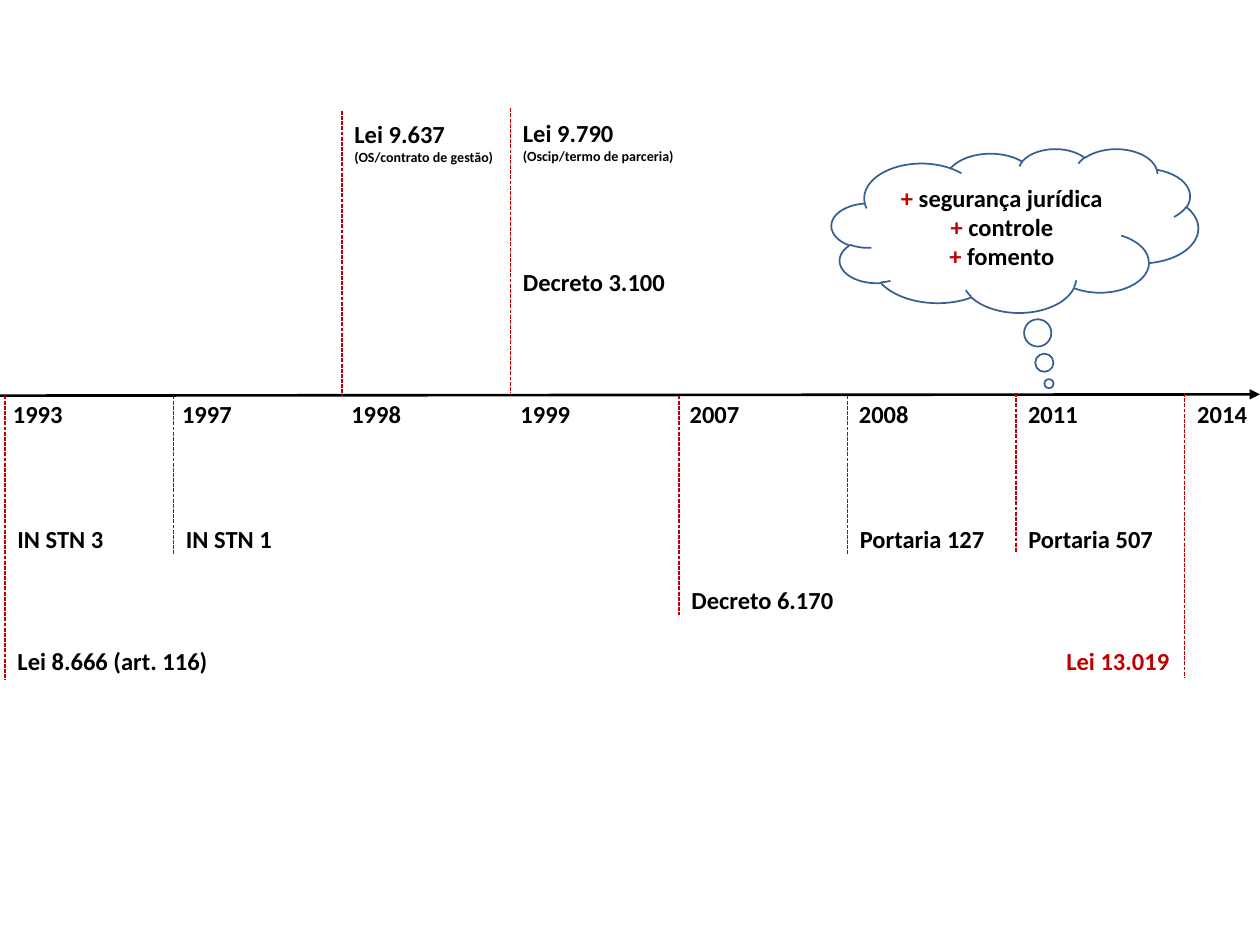
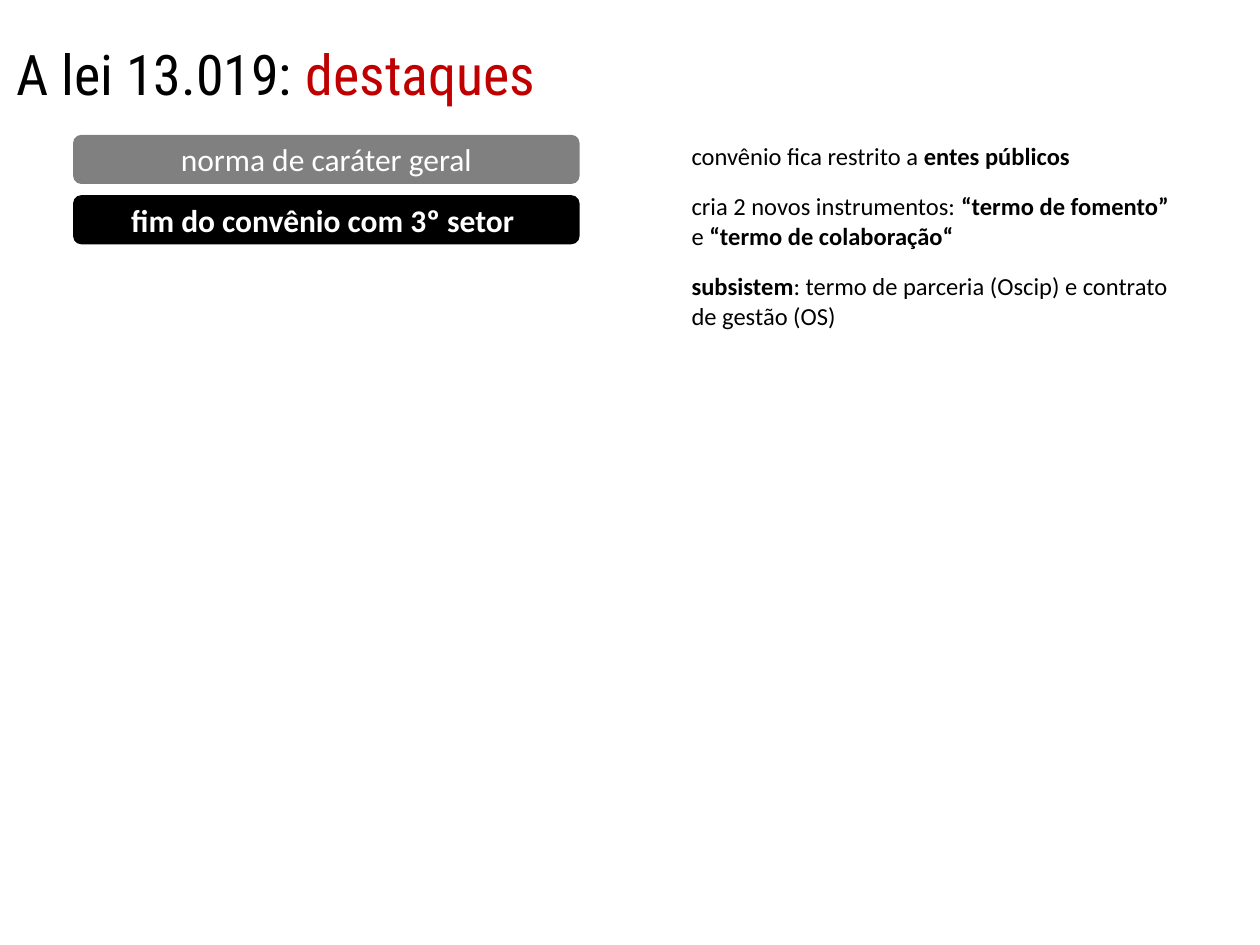
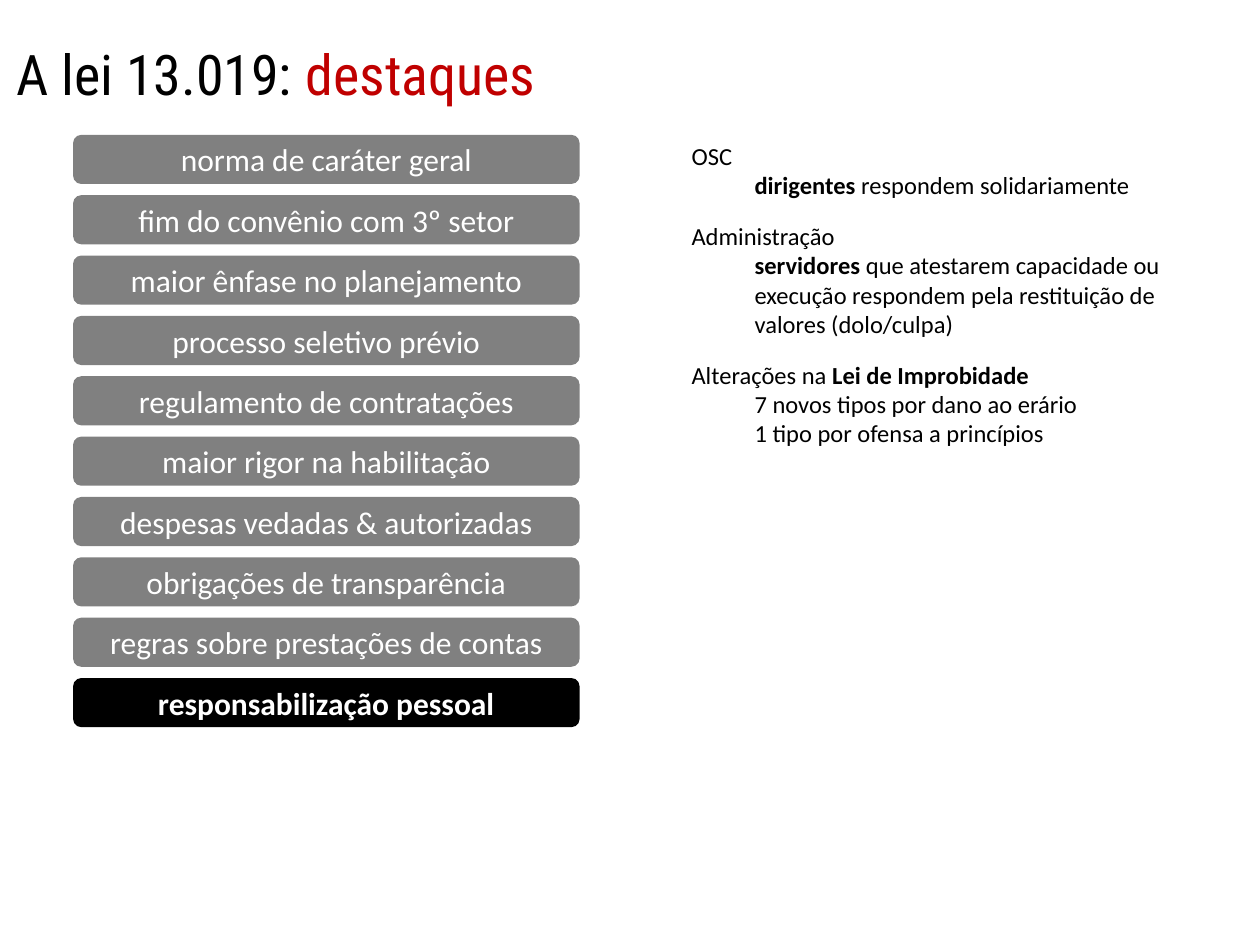
import copy
from dataclasses import dataclass

import pptx
import pptx.dml.color
import pptx.enum.dml
import pptx.enum.shapes
import pptx.enum.text
import pptx.oxml.ns
import pptx.util
from lxml import etree

Inches, Pt = pptx.util.Inches, pptx.util.Pt
RGBColor = pptx.dml.color.RGBColor
Align = pptx.enum.text.PP_ALIGN
Anchor = pptx.enum.text.MSO_ANCHOR
AutoSize = pptx.enum.text.MSO_AUTO_SIZE
Shape = pptx.enum.shapes.MSO_SHAPE

# Shared look
BLACK = RGBColor(0x00, 0x00, 0x00)
WHITE = RGBColor(0xFF, 0xFF, 0xFF)
RED = RGBColor(0xC0, 0x00, 0x00)
GRAY = RGBColor(0x80, 0x80, 0x80)
BLUE = RGBColor(0x37, 0x60, 0x92)
BODY_FONT, TITLE_FONT = "Calibri", "Roboto Condensed"

# Grids, in inches
SLIDE_WIDTH, SLIDE_HEIGHT = 10, 7.5
AXIS_TOP = 3.14
YEAR_WIDTH, LINE_HEIGHT = 0.6, 0.34
FIRST_MARK, LAST_MARK = 0.04, 9.4
BAR_LEFT, BAR_TOP, BAR_WIDTH, BAR_HEIGHT = 0.58, 1.07, 4.02, 0.39
BAR_PITCH = 0.479
PANEL_LEFT, PANEL_HEIGHT = 5.39, 4.71


@dataclass(frozen=True)
class Span:
    text: str
    bold: bool = False
    color: RGBColor = BLACK
    size: float = 14
    font: str = BODY_FONT
    break_after: bool = False


@dataclass(frozen=True)
class Para:
    spans: tuple[Span, ...]
    align: Align = Align.LEFT
    after: float = 0
    indented: bool = False
    spacing: float | None = None


@dataclass(frozen=True)
class Year:
    name: str
    mark_top: float
    mark_bottom: float


@dataclass(frozen=True)
class Label:
    column: int
    top: float
    width: float
    spans: tuple[Span, ...]
    height: float = LINE_HEIGHT
    anchor: Anchor = Anchor.TOP
    before_mark: bool = False


@dataclass(frozen=True)
class Topic:
    bars: tuple[str, ...]
    panel: tuple[Para, ...]


def strong(text: str, color: RGBColor = BLACK) -> Span:
    return Span(text, True, color)


def law(name: str, note: str) -> tuple[Span, ...]:
    return Span(name, True, break_after=True), Span(note, True, size=8)


YEARS = (
    Year("1993", 3.14, 5.4), Year("1997", 3.14, 4.4),
    Year("1998", 0.88, 3.14), Year("1999", 0.86, 3.12),
    Year("2007", 3.14, 4.88), Year("2008", 3.14, 4.4),
    Year("2011", 3.12, 4.38), Year("2014", 3.12, 5.38),
)
LABELS = (
    Label(0, 5.07, 1.73, (strong("Lei 8.666 (art. 116)"),), anchor=Anchor.BOTTOM),
    Label(0, 4.11, 0.89, (strong("IN STN 3"),)),
    Label(1, 4.11, 0.89, (strong("IN STN 1"),)),
    Label(2, 0.89, 1.32, law("Lei 9.637", "(OS/contrato de gestão)"), 0.47, Anchor.BOTTOM),
    Label(3, 0.88, 1.41, law("Lei 9.790", "(Oscip/termo de parceria)"), 0.47, Anchor.BOTTOM),
    Label(3, 2.07, 1.33, (strong("Decreto 3.100"),)),
    Label(4, 4.59, 1.33, (strong("Decreto 6.170"),)),
    Label(5, 4.11, 1.2, (strong("Portaria 127"),)),
    Label(6, 4.11, 1.2, (strong("Portaria 507"),)),
    Label(7, 5.07, 1.02, (strong("Lei 13.019", RED),), anchor=Anchor.BOTTOM, before_mark=True),
)
GAINS = ("segurança jurídica", "controle", "fomento")
TITLE = Para((Span("A lei 13.019: ", size=32, font=TITLE_FONT),
              Span("destaques", color=RED, size=32, font=TITLE_FONT)), spacing=1.5)

# The last bar of each topic is the one in focus
TOPICS = (
    Topic(
        ("norma de caráter geral", "fim do convênio com 3º setor "),
        (
            Para((Span("convênio fica restrito a "), strong("entes públicos")), after=12),
            Para((Span("cria 2 novos instrumentos: "), strong("“termo de fomento” "),
                  Span("e "), strong("“termo de colaboração“")), after=12),
            Para((strong("subsistem"),
                  Span(": termo de parceria (Oscip) e contrato de gestão (OS)")), after=12),
        ),
    ),
    Topic(
        ("norma de caráter geral", "fim do convênio com 3º setor",
         "maior ênfase no planejamento", "processo seletivo prévio",
         "regulamento de contratações", "maior rigor na habilitação",
         "despesas vedadas & autorizadas", "obrigações de transparência",
         "regras sobre prestações de contas", "responsabilização pessoal"),
        (
            Para((Span("OSC"),)),
            Para((strong("dirigentes"), Span(" respondem solidariamente")),
                 after=12, indented=True),
            Para((Span("Administração"),)),
            Para((strong("servidores"),
                  Span(" que atestarem capacidade ou execução respondem pela "
                       "restituição de valores (dolo/culpa)")), after=12, indented=True),
            Para((Span("Alterações na "), strong("Lei de Improbidade"))),
            Para((Span("7 novos tipos por dano ao erário"),), indented=True),
            Para((Span("1 tipo por ofensa a princípios"),), indented=True),
        ),
    ),
)


def mark_left(column: int) -> float:
    return FIRST_MARK + column * (LAST_MARK - FIRST_MARK) / (len(YEARS) - 1)


def write(frame, paras: tuple[Para, ...], anchor: Anchor = Anchor.TOP) -> None:
    """Fill a text frame run by run."""
    frame.vertical_anchor = anchor
    for index, para in enumerate(paras):
        paragraph = frame.add_paragraph() if index else frame.paragraphs[0]
        paragraph.alignment = para.align
        paragraph.space_before = Pt(0)
        paragraph.space_after = Pt(para.after)
        if para.spacing:
            paragraph.line_spacing = para.spacing
        if para.indented:
            paragraph.level = 1
            properties = paragraph._p.get_or_add_pPr()
            properties.set("marL", str(Inches(0.5)))
            properties.set("indent", "0")
        for span in para.spans:
            run = paragraph.add_run()
            run.text = span.text
            run.font.name = span.font
            run.font.size = Pt(span.size)
            run.font.bold = span.bold
            run.font.color.rgb = span.color
            if span.break_after:
                paragraph.add_line_break()
                paragraph._p[-1].append(copy.deepcopy(run._r.rPr))


def add_text(page, left: float, top: float, width: float, height: float,
             para: Para, anchor: Anchor = Anchor.TOP) -> None:
    box = page.shapes.add_textbox(Inches(left), Inches(top), Inches(width), Inches(height))
    box.text_frame.word_wrap = False
    box.text_frame.auto_size = AutoSize.SHAPE_TO_FIT_TEXT
    write(box.text_frame, (para,), anchor)


def add_box(page, kind: Shape, left: float, top: float, width: float, height: float,
            paras: tuple[Para, ...], anchor: Anchor, fill: RGBColor | None = None,
            line: RGBColor | None = None):
    box = page.shapes.add_shape(kind, Inches(left), Inches(top), Inches(width), Inches(height))
    box.shadow.inherit = False
    if fill is None:
        box.fill.background()
    else:
        box.fill.solid()
        box.fill.fore_color.rgb = fill
    if line is None:
        box.line.fill.background()
    else:
        box.line.color.rgb = line
        box.line.width = Pt(1)
    box.text_frame.word_wrap = True
    write(box.text_frame, paras, anchor)
    return box


def add_line(page, start: tuple[float, float], end: tuple[float, float],
             color: RGBColor, width: float):
    line = page.shapes.add_connector(
        pptx.enum.shapes.MSO_CONNECTOR.STRAIGHT,
        *(Inches(value) for value in start + end))
    line.line.color.rgb = color
    line.line.width = Pt(width)
    etree.SubElement(line._element.spPr, pptx.oxml.ns.qn("a:effectLst"))
    return line


def build_timeline(deck) -> None:
    page = deck.slides.add_slide(deck.slide_layouts[6])

    # Time axis
    axis = add_line(page, (0, AXIS_TOP), (SLIDE_WIDTH, AXIS_TOP - 0.01), BLACK, 1.5)
    etree.SubElement(axis.line._get_or_add_ln(), pptx.oxml.ns.qn("a:tailEnd"), type="triangle")

    # Years and their marks
    year_pitch = (SLIDE_WIDTH - YEAR_WIDTH) / (len(YEARS) - 1)
    for column, year in enumerate(YEARS):
        add_text(page, column * year_pitch, AXIS_TOP - 0.02, YEAR_WIDTH, LINE_HEIGHT,
                 Para((strong(year.name),), Align.CENTER))
        left = mark_left(column)
        mark = add_line(page, (left, year.mark_top), (left, year.mark_bottom), RED, 0.75)
        mark.line.dash_style = pptx.enum.dml.MSO_LINE.SQUARE_DOT

    # Laws and decrees
    for label in LABELS:
        left = mark_left(label.column)
        align = Align.LEFT
        if label.before_mark:
            left -= label.width + 0.02
            align = Align.RIGHT
        add_text(page, left, label.top, label.width, label.height,
                 Para(label.spans, align), label.anchor)

    # Thought cloud
    gains = tuple(Para((strong("+", RED), strong(f" {gain}")), Align.CENTER) for gain in GAINS)
    cloud = add_box(page, Shape.CLOUD_CALLOUT, 6.6, 1.18, 2.91, 1.3, gains,
                    Anchor.MIDDLE, line=BLUE)
    cloud.adjustments[0], cloud.adjustments[1] = 0.093, 0.935


def build_topic(deck, topic: Topic) -> None:
    page = deck.slides.add_slide(deck.slide_layouts[5])

    # Title
    title = page.shapes.title
    title.left, title.top = Inches(0.03), Inches(0)
    title.width, title.height = Inches(4.33), Inches(0.91)
    title.text_frame.word_wrap = False
    title.text_frame.auto_size = AutoSize.SHAPE_TO_FIT_TEXT
    write(title.text_frame, (TITLE,))

    # Explanation panel
    add_box(page, Shape.RECTANGLE, PANEL_LEFT, BAR_TOP, BAR_WIDTH, PANEL_HEIGHT,
            topic.panel, Anchor.TOP, WHITE)

    # Stack of bars
    for row, text in enumerate(topic.bars):
        focus = row == len(topic.bars) - 1
        para = Para((Span(text, focus, WHITE, 18),), Align.CENTER)
        add_box(page, Shape.ROUNDED_RECTANGLE, BAR_LEFT, BAR_TOP + row * BAR_PITCH,
                BAR_WIDTH, BAR_HEIGHT, (para,), Anchor.MIDDLE, BLACK if focus else GRAY)


def main() -> None:
    deck = pptx.Presentation()
    deck.slide_width, deck.slide_height = Inches(SLIDE_WIDTH), Inches(SLIDE_HEIGHT)
    build_timeline(deck)
    for topic in TOPICS:
        build_topic(deck, topic)
    deck.save("out.pptx")


if __name__ == "__main__":
    main()
